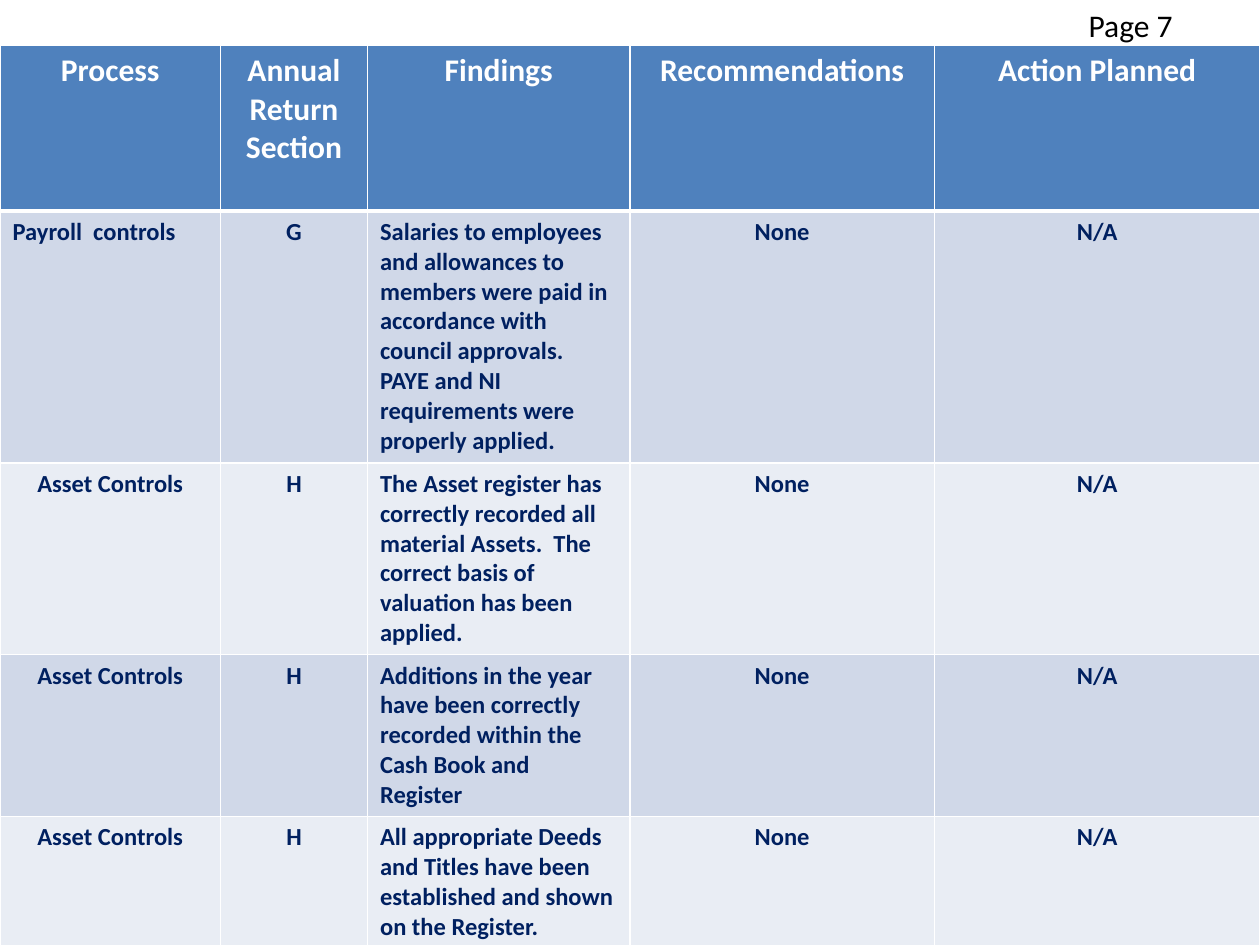
from typing import NamedTuple

from lxml import etree
from pptx import Presentation
from pptx.dml.color import RGBColor
from pptx.enum.text import PP_ALIGN
from pptx.oxml.ns import qn
from pptx.util import Pt

LEFT, CENTER = PP_ALIGN.LEFT, PP_ALIGN.CENTER
FONT = "Calibri"
WHITE, BLACK, NAVY = "FFFFFF", "000000", "002060"
HEADER_BLUE, BANDS = "4F81BD", ("D0D8E8", "E9EDF4")
COLUMN_WIDTHS = (126, 84, 150, 174, 186)
HEADER_HEIGHT = 94.5
HEADINGS = ("Process", "Annual Return Section", "Findings",
            "Recommendations", "Action Planned")


class Control(NamedTuple):
    process: str
    section: str
    findings: str
    height: float
    process_align: PP_ALIGN = CENTER
    recommendation: str = "None"
    action: str = "N/A"


CONTROLS = (
    Control("Payroll  controls", "G",
            "Salaries to employees and allowances to members were paid in "
            "accordance with council approvals. PAYE and NI requirements "
            "were properly applied.", 144, LEFT),
    Control("Asset Controls", "H",
            "The Asset register has correctly recorded all material Assets.  "
            "The correct basis of valuation has been applied.", 109.5),
    Control("Asset Controls", "H",
            "Additions in the year have been correctly recorded within the "
            "Cash Book and Register", 92.5),
    Control("Asset Controls", "H",
            "All appropriate Deeds and Titles have been established and "
            "shown on the Register.", 75.5),
)


def rgb(value: str) -> RGBColor:
    return RGBColor.from_string(value)


def set_text(frame, text: str, size: float, color: str,
             align: PP_ALIGN = LEFT, bold: bool = False) -> None:
    frame.text = text
    frame.word_wrap = True
    paragraph = frame.paragraphs[0]
    paragraph.alignment = align
    font = paragraph.runs[0].font
    font.name, font.size, font.bold = FONT, Pt(size), bold
    font.color.rgb = rgb(color)


def set_borders(cell, top: float, bottom: float) -> None:
    """Draw white cell borders; they must come before the fill."""
    properties = cell._tc.get_or_add_tcPr()
    widths = {"a:lnL": 1, "a:lnR": 1, "a:lnT": top, "a:lnB": bottom}
    for position, (tag, width) in enumerate(widths.items()):
        line = etree.Element(qn(tag), w=str(Pt(width)))
        fill = etree.SubElement(line, qn("a:solidFill"))
        etree.SubElement(fill, qn("a:srgbClr"), val=WHITE)
        properties.insert(position, line)


def fill_row(table, row: int, texts: tuple, aligns: tuple, fill: str,
             size: float, color: str) -> None:
    for column, (text, align) in enumerate(zip(texts, aligns)):
        cell = table.cell(row, column)
        set_text(cell.text_frame, text, size, color, align, bold=True)
        cell.fill.solid()
        cell.fill.fore_color.rgb = rgb(fill)
        set_borders(cell, top=3 if row == 1 else 1, bottom=3 if row == 0 else 1)


def add_findings_table(slide) -> None:
    heights = (HEADER_HEIGHT, *(control.height for control in CONTROLS))
    table = slide.shapes.add_table(
        len(heights), len(HEADINGS), Pt(0), Pt(26),
        Pt(sum(COLUMN_WIDTHS)), Pt(sum(heights))).table
    for column, width in zip(table.columns, COLUMN_WIDTHS):
        column.width = Pt(width)
    for row, height in zip(table.rows, heights):
        row.height = Pt(height)

    fill_row(table, 0, HEADINGS, (CENTER,) * len(HEADINGS),
             HEADER_BLUE, 18, WHITE)
    for index, control in enumerate(CONTROLS):
        texts = (control.process, control.section, control.findings,
                 control.recommendation, control.action)
        aligns = (control.process_align, CENTER, LEFT, CENTER, CENTER)
        fill_row(table, index + 1, texts, aligns,
                 BANDS[index % len(BANDS)], 14, NAVY)


def main() -> None:
    presentation = Presentation()
    presentation.slide_width, presentation.slide_height = Pt(720), Pt(540)
    slide = presentation.slides.add_slide(presentation.slide_layouts[6])

    # Table of audit findings
    add_findings_table(slide)

    # Page number
    page_number = slide.shapes.add_textbox(Pt(615), Pt(0), Pt(105), Pt(29))
    set_text(page_number.text_frame, "Page 7", 18, BLACK)

    presentation.save("out.pptx")


if __name__ == "__main__":
    main()
